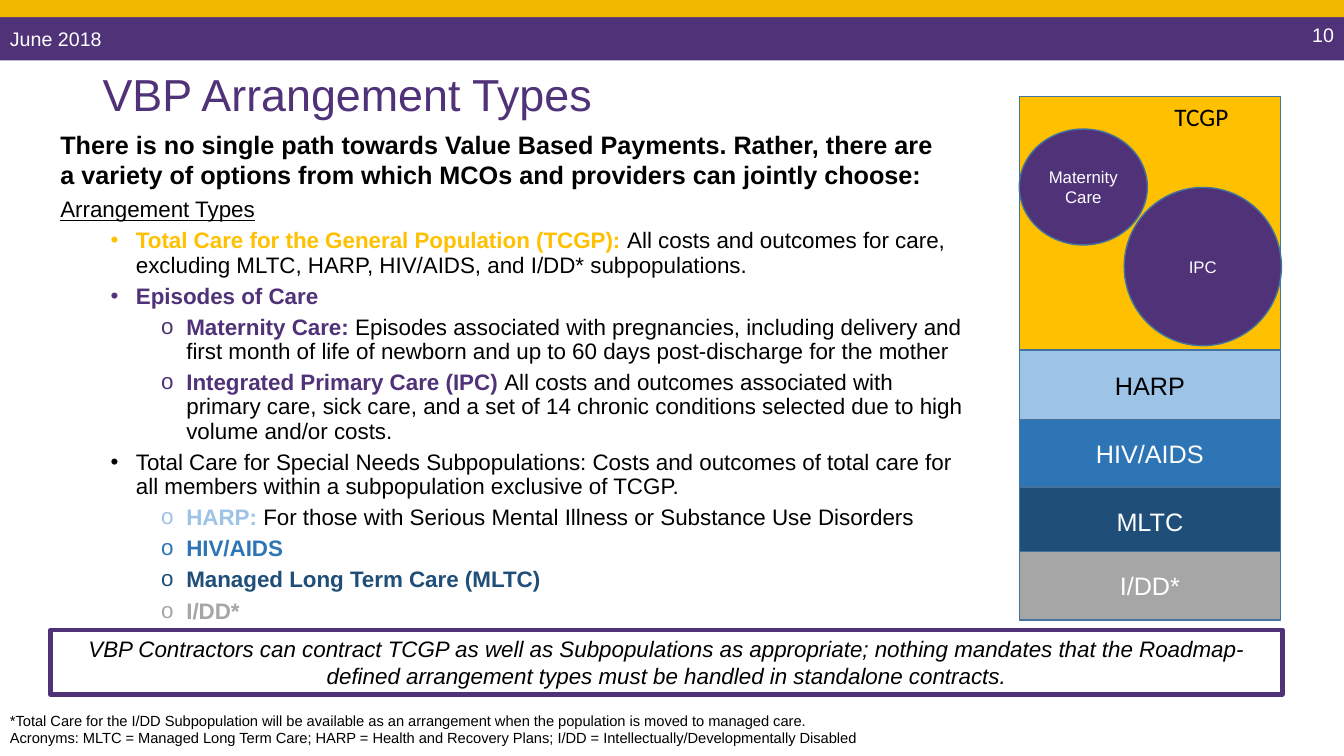
from dataclasses import dataclass
from typing import Optional

from lxml.etree import SubElement
from pptx import Presentation
from pptx.dml.color import RGBColor
from pptx.enum.shapes import MSO_SHAPE
from pptx.enum.text import MSO_ANCHOR, PP_ALIGN
from pptx.oxml.ns import qn
from pptx.util import Inches, Pt


@dataclass(frozen=True)
class Theme:
    font: str = "Arial"
    label_font: str = "Calibri"
    purple: str = "503278"
    gold: str = "F2B800"
    amber: str = "FFC000"
    light_blue: str = "9DC3E6"
    blue: str = "2E75B6"
    navy: str = "1F4E79"
    grey: str = "A6A6A6"
    outline: str = "43739E"
    black: str = "000000"
    white: str = "FFFFFF"
    title: float = 32
    lead: float = 18
    body: float = 16
    header: float = 14
    circle: float = 12
    footnote: float = 10.5


THEME = Theme()


@dataclass(frozen=True)
class Box:
    left: float
    top: float
    width: float
    height: float

    def lengths(self) -> tuple:
        return tuple(Inches(v) for v in (self.left, self.top, self.width, self.height))


@dataclass(frozen=True)
class Block:
    """A filled or outlined shape with an optional label."""
    box: Box
    fill: Optional[str] = None
    text: str = ""
    color: str = THEME.white
    size: float = THEME.lead
    kind: MSO_SHAPE = MSO_SHAPE.RECTANGLE
    line: Optional[str] = THEME.outline
    line_width: float = 1
    italic: bool = False


@dataclass(frozen=True)
class Item:
    """A bullet: a bold coloured term, then plain text."""
    level: int
    term: str = ""
    color: str = THEME.black
    detail: str = ""


BANDS = [
    Block(Box(0, 0.17, 13.33, 0.43), THEME.purple, line=None),
    Block(Box(0, 0, 13.33, 0.17), THEME.gold, line=None),
]

POPULATIONS = [
    Block(Box(10.11, 0.96, 2.59, 2.51), THEME.amber),
    Block(Box(10.11, 3.48, 2.59, 0.68), THEME.light_blue, "HARP", THEME.black),
    Block(Box(10.11, 4.16, 2.59, 0.68), THEME.blue, "HIV/AIDS"),
    Block(Box(10.11, 4.83, 2.59, 0.68), THEME.navy, "MLTC"),
    Block(Box(10.11, 5.47, 2.59, 0.68), THEME.grey, "I/DD*"),
    Block(Box(10.11, 1.28, 1.27, 1.15), THEME.purple, "Maternity Care",
          size=THEME.circle, kind=MSO_SHAPE.OVAL),
    Block(Box(11.15, 1.86, 1.56, 1.57), THEME.purple, "IPC",
          size=THEME.circle, kind=MSO_SHAPE.OVAL),
]

CALLOUT = Block(
    Box(0.5, 6.25, 12.22, 0.64),
    text="VBP Contractors can contract TCGP as well as Subpopulations as appropriate; nothing "
         "mandates that the Roadmap-defined arrangement types must be handled in standalone contracts.",
    color=THEME.black, size=THEME.body, line=THEME.purple, line_width=3, italic=True,
)

ARRANGEMENTS = [
    Item(1, "Total Care for the General Population (TCGP): ", THEME.amber,
         "All costs and outcomes for care, excluding MLTC, HARP, HIV/AIDS, and I/DD* subpopulations."),
    Item(1, "Episodes of Care", THEME.purple),
    Item(2, "Maternity Care: ", THEME.purple,
         "Episodes associated with pregnancies, including delivery and first month of life of "
         "newborn and up to 60 days post-discharge for the mother"),
    Item(2, "Integrated Primary Care (IPC) ", THEME.purple,
         "All costs and outcomes associated with primary care, sick care, and a set of 14 chronic "
         "conditions selected due to high volume and/or costs."),
    Item(1, detail="Total Care for Special Needs Subpopulations: Costs and outcomes of total care "
                   "for all members within a subpopulation exclusive of TCGP."),
    Item(2, "HARP: ", THEME.light_blue,
         "For those with Serious Mental Illness or Substance Use Disorders"),
    Item(2, "HIV/AIDS", THEME.blue),
    Item(2, "Managed Long Term Care (MLTC)", THEME.navy),
    Item(2, "I/DD*", THEME.grey),
]


def add_text(paragraph, text: str, *, size: float, color: str = THEME.black,
             font: str = THEME.font, bold: bool = False, italic: bool = False,
             underline: bool = False) -> None:
    run = paragraph.add_run()
    run.text = text
    run.font.name = font
    run.font.size = Pt(size)
    run.font.color.rgb = RGBColor.from_string(color)
    run.font.bold = bold
    run.font.italic = italic
    run.font.underline = underline


def add_frame(slide, box: Box, anchor: MSO_ANCHOR = MSO_ANCHOR.TOP):
    frame = slide.shapes.add_textbox(*box.lengths()).text_frame
    frame.word_wrap = True
    frame.vertical_anchor = anchor
    return frame


def draw_block(slide, block: Block) -> None:
    shape = slide.shapes.add_shape(block.kind, *block.box.lengths())
    shape.shadow.inherit = False
    if block.fill:
        shape.fill.solid()
        shape.fill.fore_color.rgb = RGBColor.from_string(block.fill)
    else:
        shape.fill.background()
    if block.line:
        shape.line.color.rgb = RGBColor.from_string(block.line)
        shape.line.width = Pt(block.line_width)
    else:
        shape.line.fill.background()
    if block.text:
        frame = shape.text_frame
        frame.word_wrap = True
        frame.vertical_anchor = MSO_ANCHOR.MIDDLE
        paragraph = frame.paragraphs[0]
        paragraph.alignment = PP_ALIGN.CENTER
        add_text(paragraph, block.text, size=block.size, color=block.color, italic=block.italic)


def add_item(frame, item: Item) -> None:
    paragraph = frame.add_paragraph()
    paragraph.level = item.level
    paragraph.line_spacing = 0.9
    paragraph.space_before = Pt(5)
    properties = paragraph._p.get_or_add_pPr()
    properties.set("marL", str(Inches(0.25 + 0.5 * item.level)))
    properties.set("indent", str(Inches(-0.25)))
    SubElement(properties, qn("a:buFont")).set("typeface", THEME.font)
    SubElement(properties, qn("a:buChar")).set("char", "•" if item.level == 1 else "o")
    if item.term:
        add_text(paragraph, item.term, size=THEME.body, color=item.color, bold=True)
    if item.detail:
        add_text(paragraph, item.detail, size=THEME.body)


def draw_header(slide) -> None:
    for band in BANDS:
        draw_block(slide, band)
    date = add_frame(slide, Box(0, 0.18, 3, 0.4), MSO_ANCHOR.MIDDLE).paragraphs[0]
    add_text(date, "June 2018", size=THEME.header, color=THEME.white)
    number = add_frame(slide, Box(12.42, 0.16, 0.91, 0.37), MSO_ANCHOR.MIDDLE).paragraphs[0]
    number.alignment = PP_ALIGN.RIGHT
    add_text(number, "10", size=THEME.header, color=THEME.white)


def draw_arrangements(slide) -> None:
    title = add_frame(slide, Box(0.92, 0.67, 11.5, 1.15)).paragraphs[0]
    title.line_spacing = 0.9
    add_text(title, "VBP Arrangement Types", size=THEME.title, color=THEME.purple)
    lead = add_frame(slide, Box(0.5, 1.23, 8.88, 0.71)).paragraphs[0]
    add_text(lead, "There is no single path towards Value Based Payments. Rather, there are a variety "
                   "of options from which MCOs and providers can jointly choose:",
             size=THEME.lead, bold=True)
    body = add_frame(slide, Box(0.5, 1.92, 9.2, 4.76))
    heading = body.paragraphs[0]
    heading.line_spacing = 0.9
    add_text(heading, "Arrangement Types", size=THEME.body, underline=True)
    for item in ARRANGEMENTS:
        add_item(body, item)


def draw_footnotes(slide) -> None:
    frame = add_frame(slide, Box(0, 7.01, 13.32, 0.45))
    add_text(frame.paragraphs[0], "*Total Care for the I/DD Subpopulation will be available as an "
             "arrangement when the population is moved to managed care.", size=THEME.footnote)
    add_text(frame.add_paragraph(), "Acronyms: MLTC = Managed Long Term Care; HARP = Health and Recovery "
             "Plans; I/DD = Intellectually/Developmentally Disabled", size=THEME.footnote)


def main() -> None:
    deck = Presentation()
    deck.slide_width, deck.slide_height = Inches(13.33), Inches(7.5)
    slide = deck.slides.add_slide(deck.slide_layouts[6])
    draw_header(slide)
    draw_arrangements(slide)
    for block in [*POPULATIONS, CALLOUT]:
        draw_block(slide, block)
    tcgp = add_frame(slide, Box(11.55, 0.96, 1.48, 0.4)).paragraphs[0]
    add_text(tcgp, "TCGP", size=THEME.lead, font=THEME.label_font)
    draw_footnotes(slide)
    deck.save("out.pptx")


if __name__ == "__main__":
    main()
